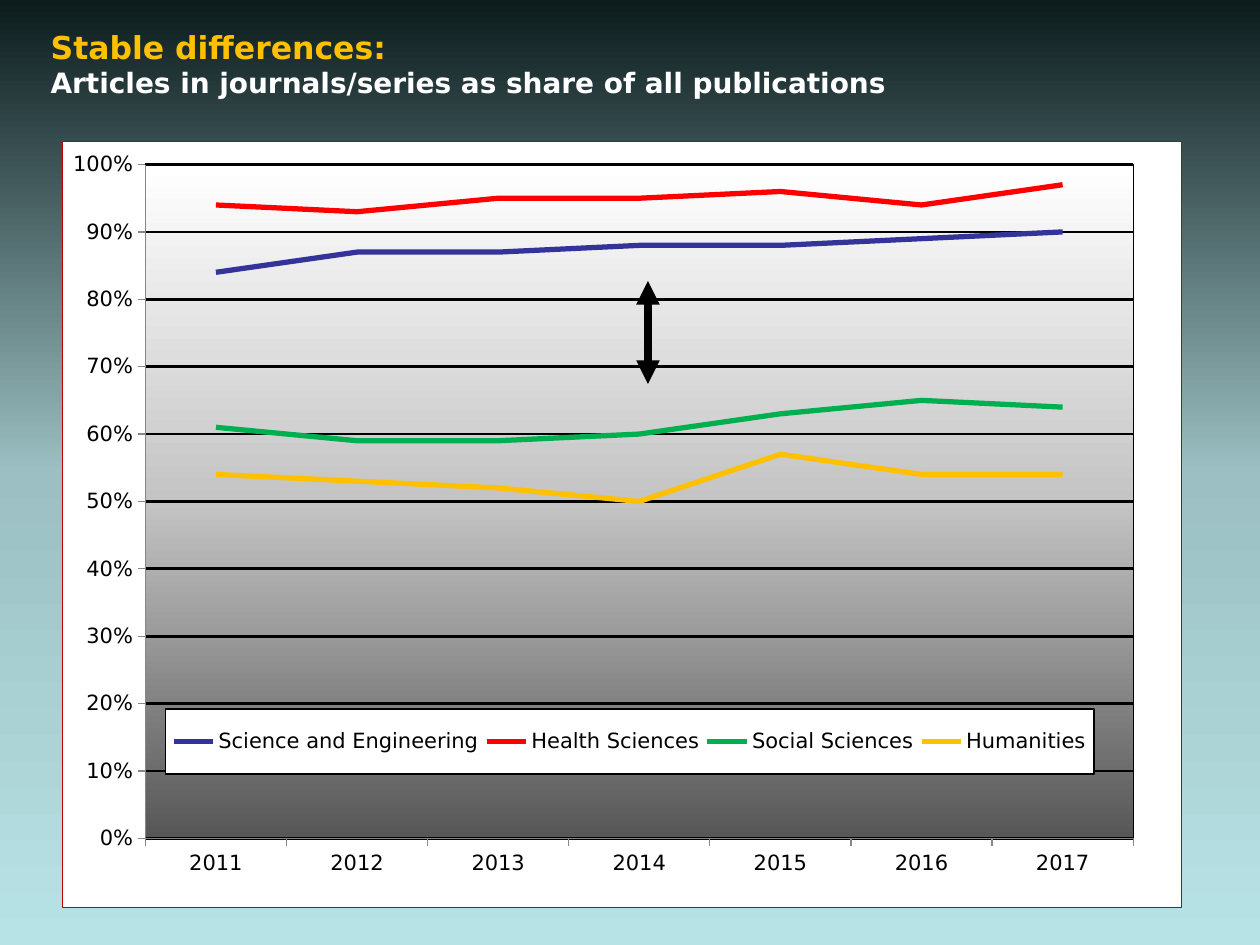
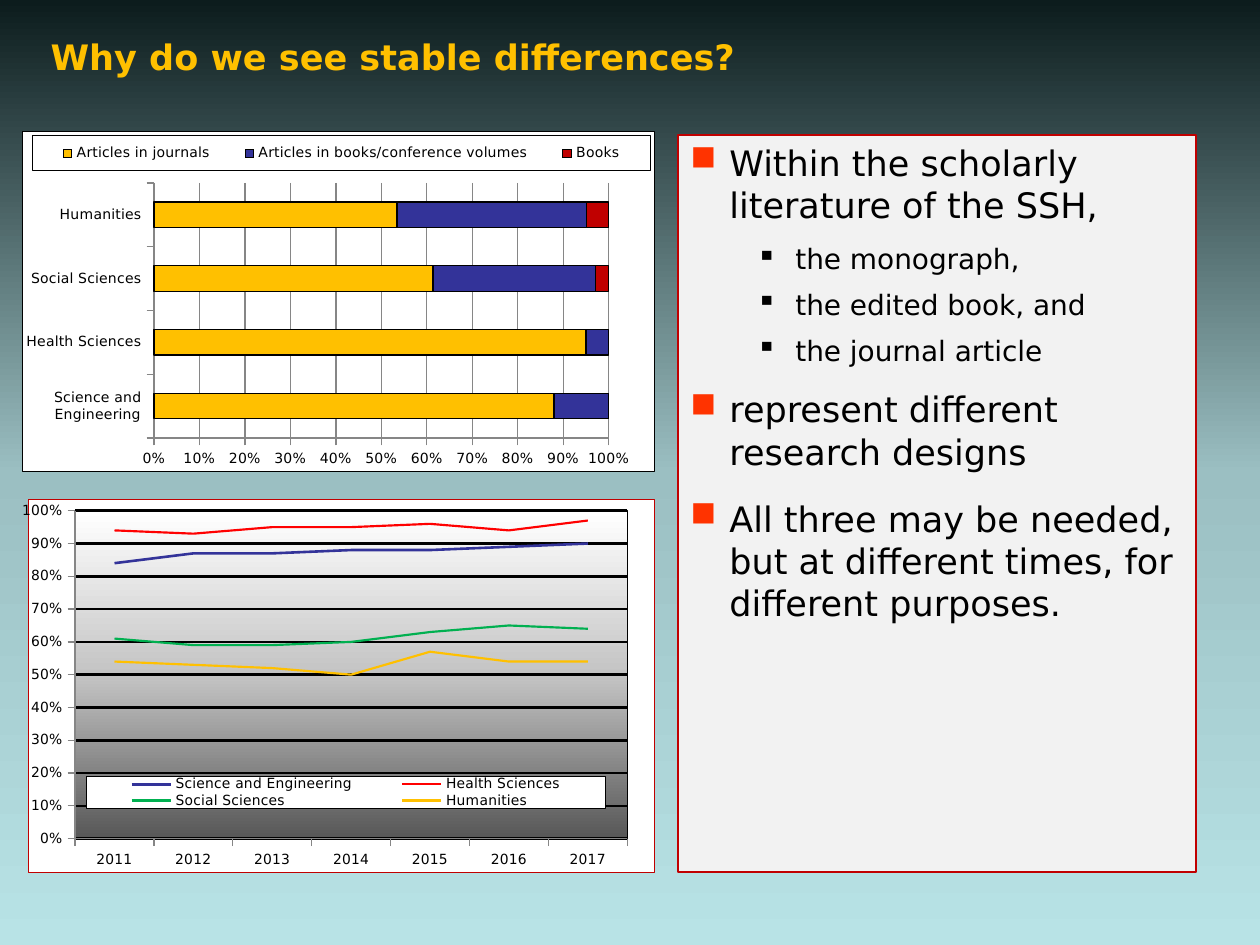
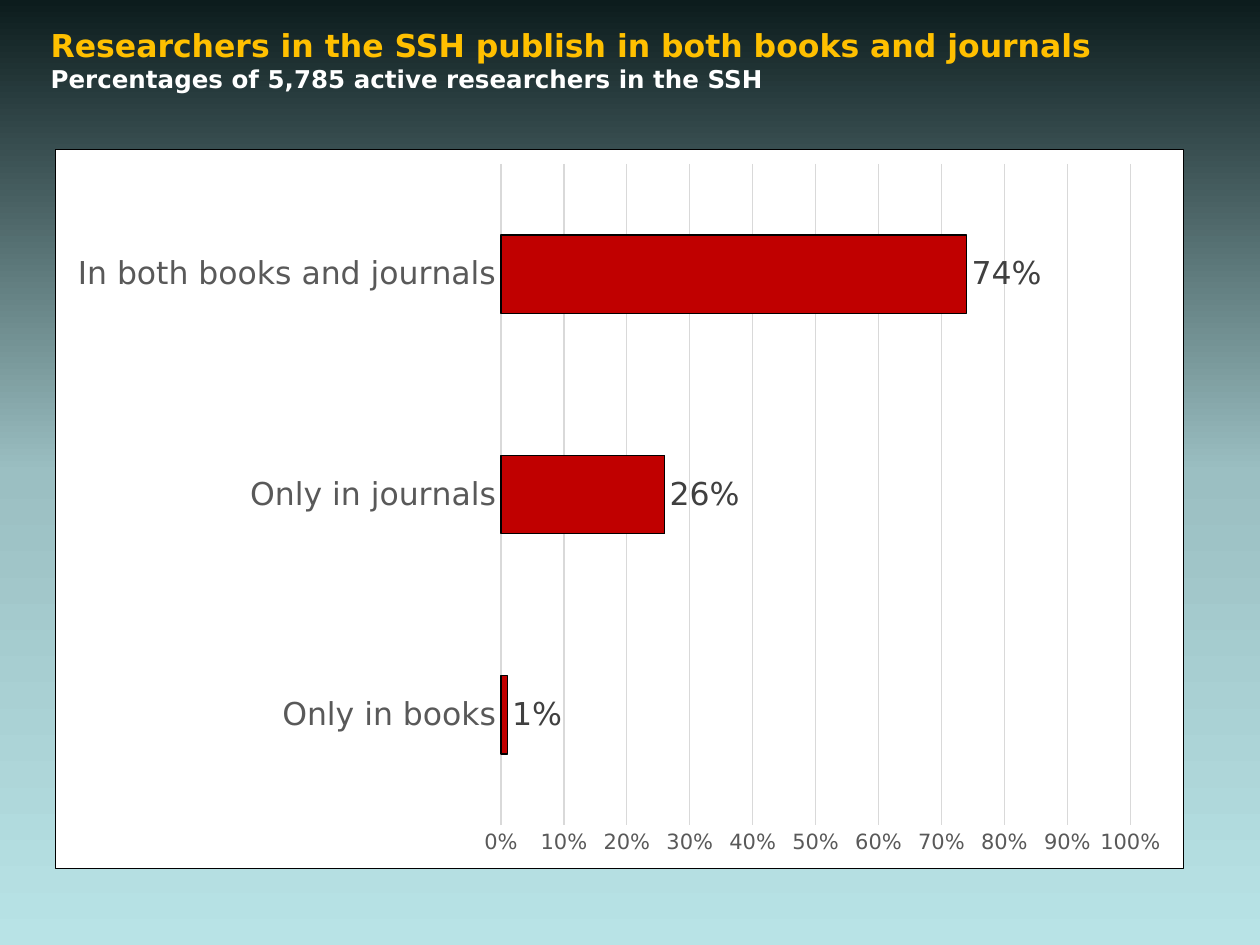
from pptx import Presentation
from pptx.chart.data import CategoryChartData
from pptx.dml.color import RGBColor
from pptx.enum.chart import XL_CHART_TYPE, XL_LABEL_POSITION, XL_LEGEND_POSITION, XL_TICK_MARK
from pptx.enum.shapes import MSO_CONNECTOR, MSO_SHAPE
from pptx.enum.text import MSO_ANCHOR, MSO_AUTO_SIZE, PP_ALIGN
from pptx.oxml import parse_xml
from pptx.oxml.ns import nsdecls, qn
from pptx.util import Emu, Pt

LINE = XL_CHART_TYPE.LINE
STACKED = XL_CHART_TYPE.BAR_STACKED_100
CLUSTERED = XL_CHART_TYPE.BAR_CLUSTERED
OUTSIDE_END = XL_LABEL_POSITION.OUTSIDE_END
LEGEND_RIGHT = XL_LEGEND_POSITION.RIGHT
TICK_OUT, TICK_NONE = XL_TICK_MARK.OUTSIDE, XL_TICK_MARK.NONE
STRAIGHT, RECT = MSO_CONNECTOR.STRAIGHT, MSO_SHAPE.RECTANGLE
TOP, MIDDLE = MSO_ANCHOR.TOP, MSO_ANCHOR.MIDDLE
NO_FIT, LEFT = MSO_AUTO_SIZE.NONE, PP_ALIGN.LEFT

FONT = "DejaVu Sans"
BLACK, WHITE, PALE = "000000", "FFFFFF", "F2F2F2"
GOLD, NAVY, DARK_RED, RED, GREEN = "FFC000", "333399", "C00000", "FF0000", "00B050"
ORANGE, AXIS_GREY, GRID_GREY = "FF3300", "868686", "D9D9D9"
LABEL_GREY, VALUE_GREY = "595959", "404040"
BACKDROP = [(0, "0C1C1D"), (50, "9BBFC2"), (100, "B8E3E6")]
PLOT_SHADE = [(0, WHITE), (50, "C4C4C4"), (100, "575757")]

YEARS = [str(year) for year in range(2011, 2018)]
ARTICLE_SHARES = [
    ("Science and Engineering", [0.84, 0.87, 0.87, 0.88, 0.88, 0.89, 0.9], NAVY),
    ("Health Sciences", [0.94, 0.93, 0.95, 0.95, 0.96, 0.94, 0.97], RED),
    ("Social Sciences", [0.61, 0.59, 0.59, 0.6, 0.63, 0.65, 0.64], GREEN),
    ("Humanities", [0.54, 0.53, 0.52, 0.5, 0.57, 0.54, 0.54], GOLD),
]
FIELDS = [name for name, _, _ in ARTICLE_SHARES]
PUBLICATION_TYPES = [
    ("Articles in journals", [88, 95, 62, 54], GOLD),
    ("Articles in books/conference volumes", [12, 5, 36, 42], NAVY),
    ("Books", [0, 0, 3, 5], DARK_RED),
]
CHANNELS = ["Only in books", "Only in journals", "In both books and journals"]
CHANNEL_SHARES = [("Series 1", [0.01, 0.26, 0.74], DARK_RED)]
DESIGN_POINTS = [
    (0, "Within the scholarly literature of the SSH,"),
    (1, "the monograph,"),
    (1, "the edited book, and"),
    (1, "the journal article"),
    (0, "represent different research designs"),
    (0, "All three may be needed, but at different times, for different purposes."),
]
LEVELS = [
    {"size": 20, "indent": 39, "bullet": "■", "color": ORANGE, "before": 8.5, "after": 6},
    {"size": 16, "indent": 105, "bullet": "▪", "color": BLACK, "before": 3.5, "after": 3.5},
]
HANGING = 39


def px(value):
    """Turn slide pixels into EMU."""
    return Emu(round(value * 914400 / 126))


def rgb(color):
    """Turn a hex string into a colour."""
    return RGBColor.from_string(color)


def set_values(obj, values):
    """Set attributes from a dict of format values."""
    for name, value in values.items():
        setattr(obj, name, value)


def style_font(font, size, color=BLACK, bold=False):
    """Format a font in the deck's typeface."""
    set_values(font, {"name": FONT, "size": Pt(size), "bold": bold})
    font.color.rgb = rgb(color)


def style_line(line, color, width):
    """Give a line its colour and width in points."""
    line.color.rgb = rgb(color)
    line.width = Pt(width)


def solid_xml(color):
    """Return the XML of a solid fill."""
    return f'<a:solidFill><a:srgbClr val="{color}"/></a:solidFill>'


def gradient_xml(stops):
    """Return the XML of a vertical gradient fill."""
    marks = "".join(
        f'<a:gs pos="{pos * 1000}"><a:srgbClr val="{color}"/></a:gs>' for pos, color in stops
    )
    return (f'<a:gradFill {nsdecls("a")} rotWithShape="1"><a:gsLst>{marks}</a:gsLst>'
            '<a:lin ang="5400000" scaled="0"/></a:gradFill>')


def chart_box(fill_xml, border):
    """Return chart shape properties with a fill and a thin border."""
    return parse_xml(f'<c:spPr {nsdecls("c", "a")}>{fill_xml}'
                     f'<a:ln w="9525">{solid_xml(border)}</a:ln></c:spPr>')


def set_layout(parent, index, area, inner=False):
    """Place a chart part by fractions of the chart's size."""
    for old in parent.findall(qn("c:layout")):
        parent.remove(old)
    target = '<c:layoutTarget val="inner"/>' if inner else ""
    modes = "".join(f'<c:{side}Mode val="edge"/>' for side in "xy")
    sizes = "".join(f'<c:{side} val="{value}"/>' for side, value in zip("xywh", area))
    parent.insert(index, parse_xml(
        f'<c:layout {nsdecls("c")}><c:manualLayout>{target}{modes}{sizes}'
        '</c:manualLayout></c:layout>'))


def set_backdrop(prs):
    """Put the gradient background on the slide master."""
    master = prs.slide_master
    master.background.fill.solid()
    props = master._element.xpath(".//p:bgPr")[0]
    props.replace(props[0], parse_xml(gradient_xml(BACKDROP)))


def add_slide(prs, lines, width=1145, drop=0):
    """Add a slide with a title of (text, size, color) lines."""
    s = prs.slides.add_slide(prs.slide_layouts[5])
    sp = s.shapes.title
    set_values(sp, {"left": px(38), "top": px(25), "width": px(width), "height": px(63)})
    tf = sp.text_frame
    set_values(tf, {"auto_size": NO_FIT, "vertical_anchor": MIDDLE, "word_wrap": True,
                    "margin_top": px(2 * drop), "margin_bottom": 0})
    p = tf.paragraphs[0]
    p.alignment = LEFT
    for i, (text, size, color) in enumerate(lines):
        if i:
            p.add_line_break()
        r = p.add_run()
        r.text = text
        style_font(r.font, size, color, bold=True)
    return s


def add_chart(s, kind, box, categories, series, area, border=BLACK):
    """Add a framed chart with its plot placed inside it."""
    data = CategoryChartData()
    data.categories = categories
    for name, values, _ in series:
        data.add_series(name, values)
    chart = s.shapes.add_chart(kind, *map(px, box), data).chart
    chart.has_title = chart.has_legend = False
    style_font(chart.font, 10)
    chart.plots[0].vary_by_categories = False
    root = chart._chartSpace
    root.find(qn("c:chart")).addnext(chart_box(solid_xml(WHITE), border))
    set_layout(root.xpath("c:chart/c:plotArea")[0], 0, area, inner=True)
    return chart


def style_axis(axis, size, color=BLACK, tick=TICK_OUT, line=AXIS_GREY):
    """Format an axis, its ticks and its labels."""
    set_values(axis, {"major_tick_mark": tick, "minor_tick_mark": TICK_NONE})
    style_font(axis.tick_labels.font, size, color)
    if line:
        style_line(axis.format.line, line, 0.75)
    else:
        axis.format.line.fill.background()


def style_percent_axis(axis, grid, width, limits=True):
    """Show percentages with gridlines, from 0 to 100 if limited."""
    set_values(axis.tick_labels, {"number_format": "0%", "number_format_is_linked": False})
    axis.has_major_gridlines = True
    style_line(axis.major_gridlines.format.line, grid, width)
    if limits:
        set_values(axis, {"minimum_scale": 0, "maximum_scale": 1, "major_unit": 0.1})


def add_legend(chart, size, area):
    """Add a white bordered legend at a fixed place."""
    chart.has_legend = True
    legend = chart.legend
    set_values(legend, {"position": LEGEND_RIGHT, "include_in_layout": False})
    style_font(legend.font, size)
    element = legend._element
    set_layout(element, 1, area)
    element.find(qn("c:overlay")).addnext(chart_box(solid_xml(WHITE), BLACK))


def style_bars(chart, series, gap):
    """Colour bars and outline them in black."""
    chart.plots[0].gap_width = gap
    for bar, (_, _, color) in zip(chart.series, series):
        bar.format.fill.solid()
        bar.format.fill.fore_color.rgb = rgb(color)
        style_line(bar.format.line, BLACK, 0.75)


def add_share_lines(s, box, size, widths):
    """Add the line chart of article shares by field."""
    chart = add_chart(s, LINE, box, YEARS, ARTICLE_SHARES, (0.074, 0.03, 0.883, 0.88), DARK_RED)
    plot_area = chart._chartSpace.xpath("c:chart/c:plotArea")[0]
    plot_area.append(chart_box(gradient_xml(PLOT_SHADE), BLACK))
    for axis in (chart.category_axis, chart.value_axis):
        style_axis(axis, size)
    style_percent_axis(chart.value_axis, BLACK, 1.5)
    for line, (_, _, color), width in zip(chart.series, ARTICLE_SHARES, widths):
        line.smooth = False
        style_line(line.format.line, color, width)
    add_legend(chart, size, (0.092, 0.741, 0.83, 0.085))


def add_type_bars(s, box):
    """Add the stacked bars of publication types by field."""
    chart = add_chart(s, STACKED, box, FIELDS, PUBLICATION_TYPES, (0.208, 0.151, 0.72, 0.751))
    for axis in (chart.category_axis, chart.value_axis):
        style_axis(axis, 8)
    style_percent_axis(chart.value_axis, AXIS_GREY, 0.75, limits=False)
    style_bars(chart, PUBLICATION_TYPES, 150)
    chart.plots[0].overlap = 100
    add_legend(chart, 8, (0.016, 0.012, 0.978, 0.103))


def add_channel_bars(s, box):
    """Add the labelled bars of publication channels."""
    chart = add_chart(s, CLUSTERED, box, CHANNELS, CHANNEL_SHARES, (0.395, 0.02, 0.558, 0.92))
    style_axis(chart.category_axis, 18, LABEL_GREY, TICK_NONE, GRID_GREY)
    style_axis(chart.value_axis, 12, LABEL_GREY, TICK_NONE, None)
    style_percent_axis(chart.value_axis, GRID_GREY, 0.75)
    style_bars(chart, CHANNEL_SHARES, 182)
    labels = chart.plots[0]
    labels.has_data_labels = True
    labels = labels.data_labels
    set_values(labels, {"show_value": True, "number_format": "0%",
                        "number_format_is_linked": False, "position": OUTSIDE_END})
    style_font(labels.font, 18, VALUE_GREY)


def add_double_arrow(s, x, top, bottom):
    """Add a thick vertical arrow with two heads."""
    arrow = s.shapes.add_connector(STRAIGHT, px(x), px(top), px(x), px(bottom))
    style_line(arrow.line, BLACK, 4.5)
    ln = arrow.line._get_or_add_ln()
    for end in ("headEnd", "tailEnd"):
        ln.append(parse_xml(f'<a:{end} {nsdecls("a")} type="triangle"/>'))
    arrow._element.spPr.append(parse_xml(f'<a:effectLst {nsdecls("a")}/>'))


def set_bullet(p, level):
    """Give a paragraph a hanging bullet."""
    props = p._p.get_or_add_pPr()
    props.set("marL", str(px(level["indent"])))
    props.set("indent", str(-px(HANGING)))
    props.append(parse_xml(f'<a:buClr {nsdecls("a")}><a:srgbClr val="{level["color"]}"/></a:buClr>'))
    props.append(parse_xml(f'<a:buChar {nsdecls("a")} char="{level["bullet"]}"/>'))


def add_bullet_panel(s, box, points):
    """Add a bordered panel of bulleted (level, text) points."""
    sp = s.shapes.add_shape(RECT, *map(px, box))
    sp.shadow.inherit = False
    sp.fill.solid()
    sp.fill.fore_color.rgb = rgb(PALE)
    style_line(sp.line, DARK_RED, 1)
    tf = sp.text_frame
    set_values(tf, {"word_wrap": True, "vertical_anchor": TOP})
    for i, (depth, text) in enumerate(points):
        level = LEVELS[depth]
        p = tf.add_paragraph() if i else tf.paragraphs[0]
        set_bullet(p, level)
        set_values(p, {"level": depth, "alignment": LEFT, "space_after": Pt(level["after"]),
                       "space_before": Pt(level["before"] if i else 0)})
        r = p.add_run()
        r.text = text
        style_font(r.font, level["size"])


def main():
    """Build the deck."""
    prs = Presentation()
    set_values(prs, {"slide_width": px(1260), "slide_height": px(945)})
    set_backdrop(prs)

    s = add_slide(prs, [("Stable differences:", 18, GOLD),
                        ("Articles in journals/series as share of all publications", 16, WHITE)],
                  drop=7)
    add_share_lines(s, (62, 141, 1120, 767), 12, [3] * 4)
    add_double_arrow(s, 648, 281, 384)

    s = add_slide(prs, [("Why do we see stable differences?", 20, GOLD)])
    add_type_bars(s, (22, 131, 633, 341))
    add_share_lines(s, (22, 499, 633, 374), 8, [1.5, 1.25, 1.25, 1.25])
    add_bullet_panel(s, (678, 135, 518, 737), DESIGN_POINTS)

    s = add_slide(prs, [("Researchers in the SSH publish in both books and journals", 18, GOLD),
                        ("Percentages of 5,785 active researchers in the SSH", 14, WHITE)],
                  width=1186, drop=3)
    add_channel_bars(s, (55, 149, 1129, 720))
    prs.save("out.pptx")


if __name__ == "__main__":
    main()
